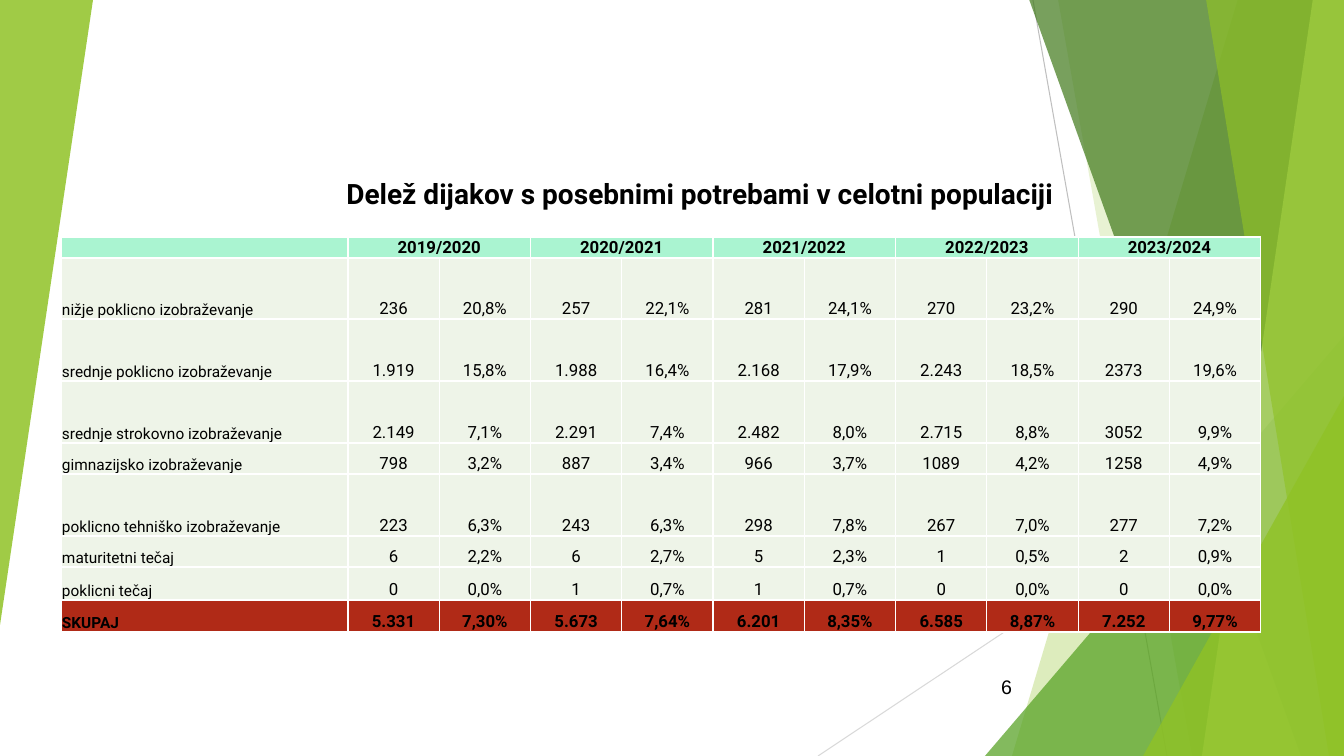
from lxml import etree
from pptx import Presentation
from pptx.dml.color import RGBColor
from pptx.enum.shapes import MSO_CONNECTOR, MSO_SHAPE
from pptx.enum.text import MSO_ANCHOR, PP_ALIGN
from pptx.oxml.ns import qn
from pptx.util import Pt

LEFT, MID, RIGHT = PP_ALIGN.LEFT, PP_ALIGN.CENTER, PP_ALIGN.RIGHT
CENTRE, BOTTOM = MSO_ANCHOR.MIDDLE, MSO_ANCHOR.BOTTOM
TRIANGLE, STRAIGHT = MSO_SHAPE.ISOSCELES_TRIANGLE, MSO_CONNECTOR.STRAIGHT

# Content
TITLE = "Delež dijakov s posebnimi potrebami v celotni populaciji"
NUMBER = "6"
YEARS = ["2019/2020", "2020/2021", "2021/2022", "2022/2023", "2023/2024"]
ROWS = [
    ("nižje poklicno izobraževanje", "236 20,8% 257 22,1% 281 24,1% 270 23,2% 290 24,9%"),
    ("srednje poklicno izobraževanje",
     "1.919 15,8% 1.988 16,4% 2.168 17,9% 2.243 18,5% 2373 19,6%"),
    ("srednje strokovno izobraževanje", "2.149 7,1% 2.291 7,4% 2.482 8,0% 2.715 8,8% 3052 9,9%"),
    ("gimnazijsko izobraževanje", "798 3,2% 887 3,4% 966 3,7% 1089 4,2% 1258 4,9%"),
    ("poklicno tehniško izobraževanje", "223 6,3% 243 6,3% 298 7,8% 267 7,0% 277 7,2%"),
    ("maturitetni tečaj", "6 2,2% 6 2,7% 5 2,3% 1 0,5% 2 0,9%"),
    ("poklicni tečaj", "0 0,0% 1 0,7% 1 0,7% 0 0,0% 0 0,0%"),
    ("SKUPAJ", "5.331 7,30% 5.673 7,64% 6.201 8,35% 6.585 8,87% 7.252 9,77%"),
]
HEIGHTS = [21, 61, 62, 62, 31, 62, 31, 33, 32]

# Backdrop, back to front: lines, slabs (top x, bottom x), triangles (box, turn)
WIDE, HIGH = 1344, 756
LINES = [((1033, 0, 1167, 756), "BFBFBF"), ((1344, 406, 818, 756), "D9D9D9")]
PARTS = [
    ("slab", (1238, 1012), "90C226", 30),
    ("slab", (1058, 1192), "90C226", 20),
    ("wedge", (985, 336, 359, 420, 0), "54A021", 72),
    ("slab", (1029, 1301), "3F7819", 70),
    ("slab", (1313, 1202), "C0E474", 70),
    ("slab", (1206, 1329), "90C226", 65),
    ("wedge", (1143, 396, 201, 360, 0), "90C226", 80),
    ("wedge", (0, 0, 93, 625, 180), "90C226", 85),
]
SCALE = 12192000 / WIDE


def px(*nums):
    return [round(n * SCALE) for n in nums]


def tint(code):
    return RGBColor.from_string(code)


def paint(shape, code, alpha):
    shape.shadow.inherit = False
    shape.line.fill.background()
    shape.fill.solid()
    shape.fill.fore_color.rgb = tint(code)
    mark = shape.fill._xPr.find(".//" + qn("a:srgbClr"))
    etree.SubElement(mark, qn("a:alpha")).set("val", str(alpha * 1000))


def write(frame, text, align, **look):
    para = frame.paragraphs[0]
    para.alignment = align
    run = para.add_run()
    run.text = text
    for key, val in look.items():
        setattr(run.font, key, val)
    run.font.color.rgb = tint("000000")


def edge(cell):
    props = cell._tc.get_or_add_tcPr()
    for spot, side in enumerate(("lnL", "lnR", "lnT", "lnB")):
        line = etree.Element(qn("a:" + side), w=str(Pt(1)))
        fill = etree.SubElement(line, qn("a:solidFill"))
        etree.SubElement(fill, qn("a:srgbClr")).set("val", "FFFFFF")
        props.insert(spot, line)


deck = Presentation()
deck.slide_width, deck.slide_height = px(WIDE, HIGH)
slide = deck.slides.add_slide(deck.slide_layouts[5])
shapes = slide.shapes
title = shapes.title

# Backdrop
for ends, code in LINES:
    line = shapes.add_connector(STRAIGHT, *px(*ends))
    line.line.color.rgb = tint(code)
    line.line.width = Pt(0.75)
    etree.SubElement(line._element.spPr, qn("a:effectLst"))
for kind, nums, code, alpha in PARTS:
    if kind == "slab":
        top, low = nums
        pen = shapes.build_freeform(top, -1, SCALE)
        pen.add_line_segments([(WIDE, -1), (WIDE, HIGH), (low, HIGH)])
        part = pen.convert_to_shape()
    else:
        part = shapes.add_shape(TRIANGLE, *px(*nums[:4]))
        part.adjustments[0] = 1
        part.rotation = nums[4]
    paint(part, code, alpha)

# Slide number and title
page = shapes.add_textbox(*px(947, 666, 75, 41))
shapes._spTree.append(title._element)
title.left, title.top, title.width, title.height = px(220, 149, 960, 88)
for box in (page, title):
    box.text_frame.word_wrap = True
    box.text_frame.vertical_anchor = CENTRE
write(page.text_frame, NUMBER, RIGHT, name="Arial", size=Pt(14))
write(title.text_frame, TITLE, MID, name="Roboto", size=Pt(20), bold=True)

# Table
grid = [[""] + [text for year in YEARS for text in (year, "")]]
grid += [[label] + nums.split() for label, nums in ROWS]
last = len(grid) - 1
table = shapes.add_table(len(grid), len(grid[0]), *px(61, 237, 1200, sum(HEIGHTS))).table
for col in table.columns:
    col.width = px(91.3)[0]
table.columns[0].width = px(287)[0]
for row, high in zip(table.rows, HEIGHTS):
    row.height = px(high)[0]
for r, texts in enumerate(grid):
    shade = {0: "AAF4D1", last: "B02A17"}.get(r, "EEF4E8")
    bold = r in (0, last)
    for c, text in enumerate(texts):
        cell = table.cell(r, c)
        cell.fill.solid()
        cell.fill.fore_color.rgb = tint(shade)
        edge(cell)
        cell.margin_left, cell.margin_right, cell.margin_top, cell.margin_bottom = px(1, 1, 1, 0)
        cell.vertical_anchor = BOTTOM
        size = Pt(12 if c and not r or c else 11)
        if text:
            write(cell.text_frame, text, MID if c else LEFT, name="Roboto", size=size, bold=bold)
        else:
            end = cell.text_frame.paragraphs[0]._p.get_or_add_endParaRPr()
            end.set("sz", "1100")
for c in range(1, len(grid[0]), 2):
    table.cell(0, c).merge(table.cell(0, c + 1))

deck.save("out.pptx")
